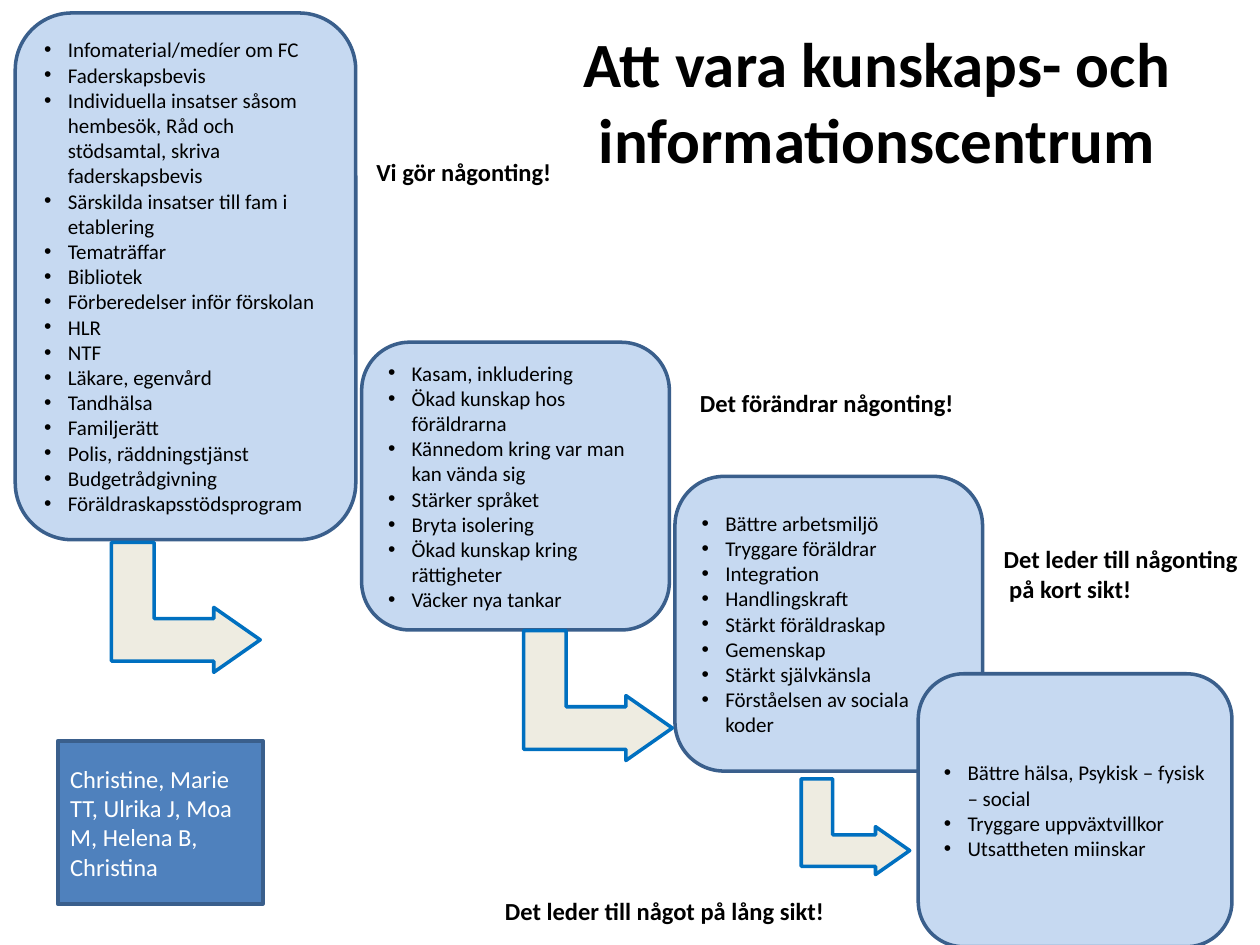
from pptx import Presentation
from pptx.dml.color import RGBColor
from pptx.enum.shapes import MSO_SHAPE
from pptx.enum.text import MSO_ANCHOR, PP_ALIGN
from pptx.oxml.ns import qn
from pptx.util import Pt
from lxml import etree

ROUND = MSO_SHAPE.ROUNDED_RECTANGLE
RECT = MSO_SHAPE.RECTANGLE
BENT = MSO_SHAPE.BENT_UP_ARROW
MID = MSO_ANCHOR.MIDDLE
LEFT, CENTER = PP_ALIGN.LEFT, PP_ALIGN.CENTER

INK, EDGE = "000000", "3A5F8C"
INDENT = 13.5

# Each card: box in points, then its list
CARDS = [
    ((8.7, 7.4, 194.6, 301), [
        "Infomaterial/medíer om FC",
        "Faderskapsbevis",
        "Individuella insatser såsom hembesök, Råd och stödsamtal, "
        "skriva faderskapsbevis",
        "Särskilda insatser till fam i etablering",
        "Tematräffar",
        "Bibliotek",
        "Förberedelser inför förskolan",
        "HLR",
        "NTF",
        "Läkare, egenvård",
        "Tandhälsa",
        "Familjerätt",
        "Polis, räddningstjänst",
        "Budgetrådgivning",
        "Föräldraskapsstödsprogram",
    ]),
    ((206.7, 195.6, 175.8, 164.4), [
        "Kasam, inkludering",
        "Ökad kunskap hos föräldrarna",
        "Kännedom kring var man kan vända sig",
        "Stärker språket",
        "Bryta isolering",
        "Ökad kunskap kring rättigheter",
        "Väcker nya tankar",
    ]),
    ((385.7, 272.2, 175.8, 168.4), [
        "Bättre arbetsmiljö",
        "Tryggare föräldrar",
        "Integration",
        "Handlingskraft",
        "Stärkt föräldraskap",
        "Gemenskap",
        "Stärkt självkänsla",
        "Förståelsen av sociala koder",
    ]),
    ((524.7, 385, 179.3, 156), [
        "Bättre hälsa, Psykisk – fysisk – social",
        "Tryggare uppväxtvillkor",
        "Utsattheten miinskar",
    ]),
]

ARROWS = [
    (69.1, 304.6, 74.2, 85),
    (304.6, 355, 74.2, 85),
    (461.5, 441.4, 54.7, 62),
]

LABELS = [
    ((208, 87, 121.7, 24), ["Vi gör någonting!"]),
    ((393, 195.8, 188, 70.6), ["Det förändrar någonting!"]),
    ((566.6, 293.8, 220.3, 70.6),
     ["Det leder till någonting", " på kort sikt!"]),
    ((281.5, 486, 208.8, 70.6), ["Det leder till något på lång sikt!"]),
]


def color(code):
    return RGBColor.from_string(code)


def place(shape, box):
    shape.left, shape.top, shape.width, shape.height = map(Pt, box)


def add_box(slide, kind, box, fill, edge):
    shape = slide.shapes.add_shape(kind, *map(Pt, box))
    shape.shadow.inherit = False
    shape.fill.solid()
    shape.fill.fore_color.rgb = color(fill)
    shape.line.color.rgb = color(edge)
    shape.line.width = Pt(2)
    return shape


def write(shape, lines, size, ink=INK, bold=False, align=LEFT):
    frame = shape.text_frame
    frame.word_wrap = True
    frame.vertical_anchor = MID
    frame.text = "\n".join(lines)
    for para in frame.paragraphs:
        para.alignment = align
        font = para.font
        font.name, font.size, font.bold = "Calibri", Pt(size), bold
        font.color.rgb = color(ink)
    return frame


def add_bullet(para):
    props = para._p.get_or_add_pPr()
    props.set("marL", str(Pt(INDENT)))
    props.set("indent", str(-Pt(INDENT)))
    # Bullet marks come before the default run properties
    font = etree.Element(qn("a:buFont"), typeface="Arial")
    mark = etree.Element(qn("a:buChar"), char="•")
    props.insert(0, font)
    props.insert(1, mark)


def add_card(slide, box, items):
    card = add_box(slide, ROUND, box, "C6D9F1", EDGE)
    for para in write(card, items, 12).paragraphs:
        add_bullet(para)


def add_arrow(slide, box):
    arrow = add_box(slide, BENT, box, "EEECE1", "0070C0")
    arrow.rotation = 90
    for i, value in enumerate((0.328, 0.25, 0.358)):
        arrow.adjustments[i] = value


def add_label(slide, box, lines):
    label = slide.shapes.add_textbox(*map(Pt, box))
    frame = write(label, lines, 14, bold=True)
    frame.margin_left = frame.margin_right = Pt(7)
    frame.margin_top = frame.margin_bottom = Pt(7)
    for para in frame.paragraphs:
        para.line_spacing = 0.9
        para.space_after = Pt(2)


def main():
    deck = Presentation()
    deck.slide_width, deck.slide_height = Pt(720), Pt(540)
    slide = deck.slides.add_slide(deck.slide_layouts[5])

    # Title
    title = slide.shapes.title
    place(title, (291.6, 12.2, 419, 90))
    write(title, ["Att vara kunskaps- och informationscentrum"], 36,
          bold=True, align=CENTER)

    # Staircase of cards with arrows and labels
    for box, items in CARDS:
        add_card(slide, box, items)
    for box in ARROWS:
        add_arrow(slide, box)
    for box, lines in LABELS:
        add_label(slide, box, lines)

    # Names of the group
    names = add_box(slide, RECT, (33, 423.3, 117.2, 93.3), "4F81BD", EDGE)
    write(names, ["Christine, Marie TT, Ulrika J, Moa M, Helena B, Christina"],
          14, ink="FFFFFF")

    deck.save("out.pptx")


if __name__ == "__main__":
    main()
